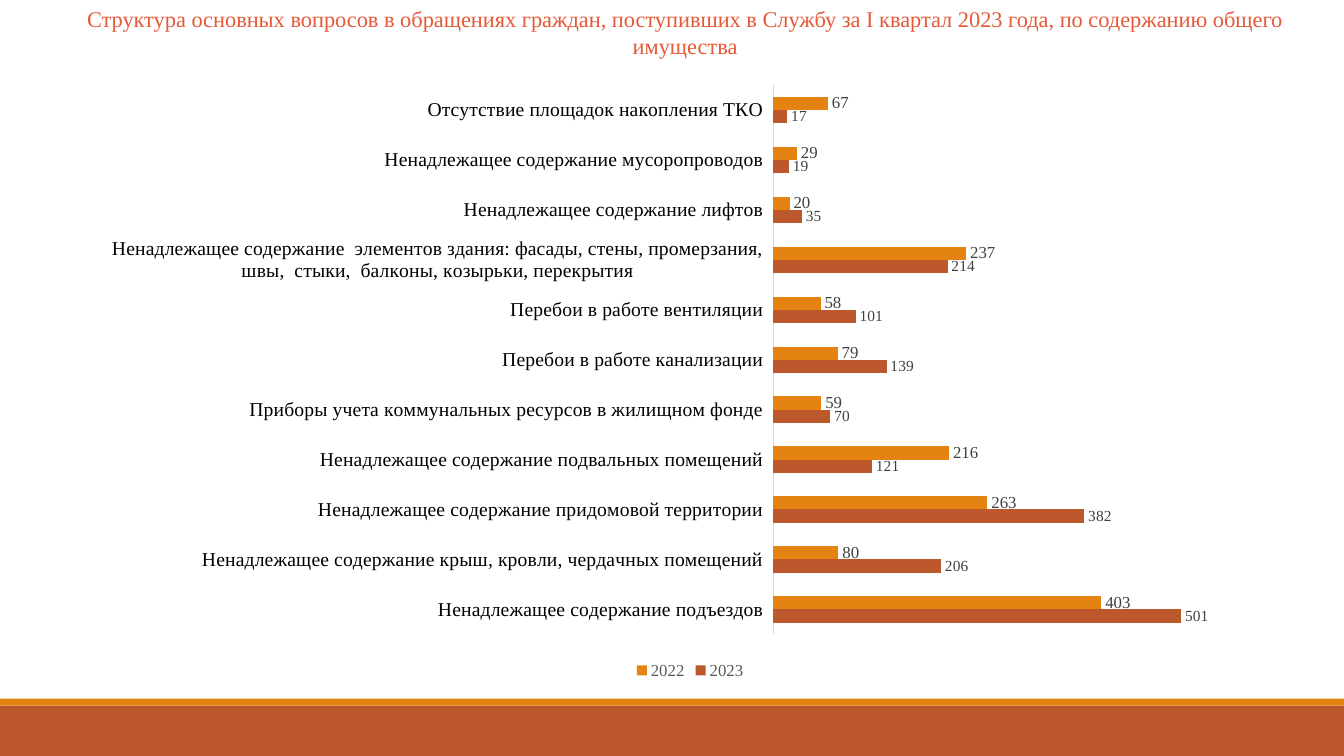
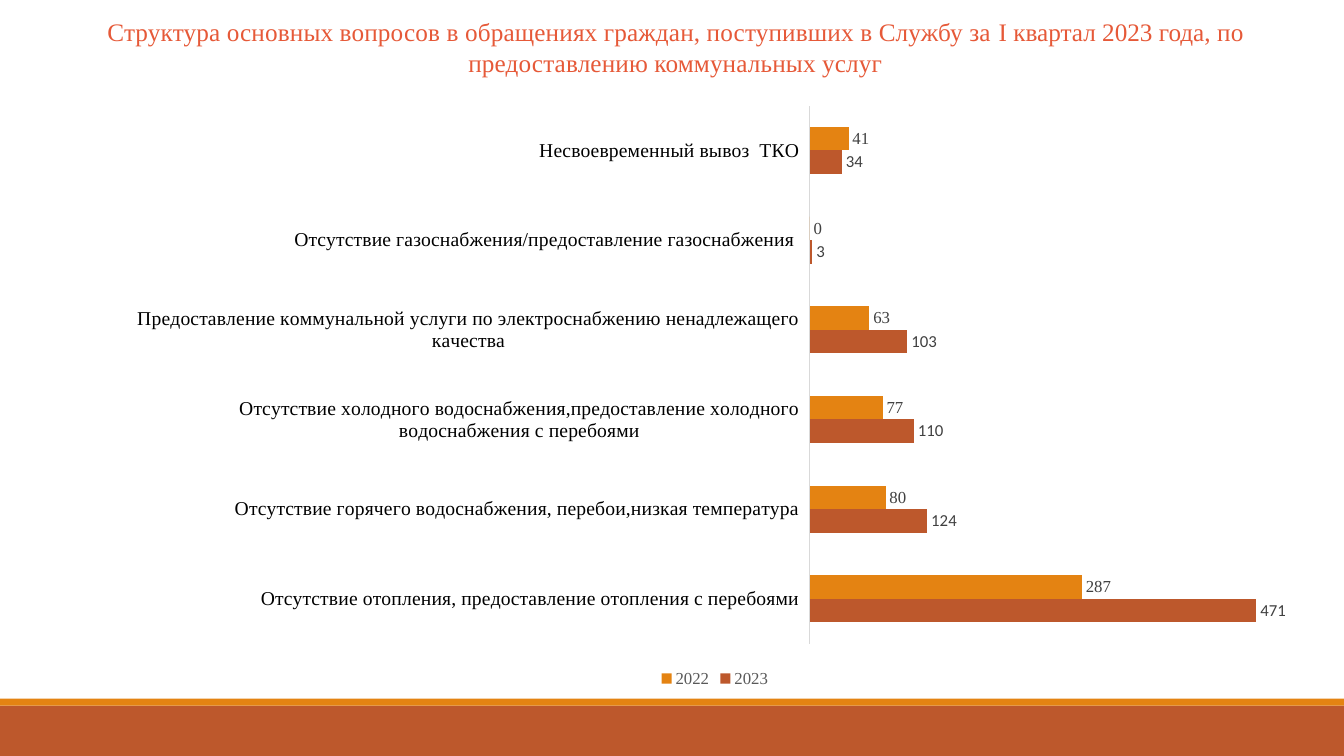
from lxml.etree import SubElement as Sub
from pptx import Presentation as Show
from pptx.chart.data import CategoryChartData as Data
from pptx.dml.color import RGBColor as Rgb
from pptx.enum.chart import XL_CHART_TYPE as Kind
from pptx.enum.chart import XL_LABEL_POSITION as Spot
from pptx.enum.chart import XL_LEGEND_POSITION as Side
from pptx.enum.chart import XL_TICK_LABEL_POSITION as Tags
from pptx.enum.chart import XL_TICK_MARK as Tick
from pptx.enum.shapes import MSO_SHAPE as Form
from pptx.enum.text import MSO_ANCHOR as Hold
from pptx.enum.text import PP_ALIGN as Align
from pptx.oxml.ns import qn
from pptx.util import Inches, Pt

SERIF, SANS = "Times New Roman", "Calibri"
RUST, AMBER, CORAL = "BD582C", "E48312", "E65938"
BLACK, DARK, GREY, PALE = "000000", "404040", "595959", "D9D9D9"


def paint(item, tone):
    if hasattr(item, "solid"):
        item.solid()
        item = item.fore_color
    item.rgb = Rgb.from_string(tone)


def style(font, size, tone, face=SERIF):
    font.size, font.name, font.bold = Pt(size), face, False
    paint(font.fill, tone)


def write(para, text, size=16, tone=CORAL, face=SERIF, space=0):
    run = para.add_run()
    run.text = text
    style(run.font, size, tone, face)
    if space:
        run.font._element.set("spc", str(space))


class Deck:
    def __init__(self):
        self.show = Show()
        self.show.slide_width = Inches(13.33)
        self.show.slide_height = Inches(7.5)
        self.slide = None

    def box(self, left, top, wide, high):
        across, down = self.show.slide_width, self.show.slide_height
        return [int(part * full / 100) for part, full in
                zip((left, top, wide, high), (across, down, across, down))]

    def page(self):
        first = self.slide is None
        self.slide = self.show.slides.add_slide(self.show.slide_layouts[5])
        if first:
            self.band(93.33, 6.67, RUST)
            self.band(92.4, 0.93, AMBER)

    def band(self, top, high, tone):
        bar = self.slide.shapes.add_shape(Form.RECTANGLE, *self.box(0, top, 100, high))
        bar.shadow.inherit = False
        paint(bar.fill, tone)
        bar.line.fill.background()
        self.show.slide_master.shapes.element.append(bar.element)

    def title(self, area, parts, size):
        head = self.slide.shapes.title
        head.left, head.top, head.width, head.height = self.box(*area)
        frame = head.text_frame
        frame.word_wrap = True
        frame.vertical_anchor = Hold.MIDDLE
        para = frame.paragraphs[0]
        para.alignment = Align.CENTER
        for text, space in parts:
            write(para, text, size=size, space=space)

    def chart(self, area, rows, plot, top, label):
        data = Data()
        data.categories = [name for name, *_ in rows]
        data.add_series("2023", [new for _, new, _ in rows])
        data.add_series("2022", [old for _, _, old in rows])
        chart = self.slide.shapes.add_chart(
            Kind.BAR_CLUSTERED, *self.box(*area), data).chart
        chart.has_title = False
        style(chart.font, 10, BLACK, SANS)
        self.axes(chart, top)
        chart.has_legend = True
        chart.legend.position = Side.BOTTOM
        chart.legend.include_in_layout = False
        style(chart.legend.font, 12, GREY)
        bars = chart.plots[0]
        bars.gap_width, bars.vary_by_categories = 182, False
        looks = (RUST, label), (AMBER, (12, DARK, SERIF))
        for row, (tone, look) in zip(bars.series, looks):
            row.invert_if_negative = False
            paint(row.format.fill, tone)
            tags = row.data_labels
            tags.show_value, tags.position = True, Spot.OUTSIDE_END
            style(tags.font, *look)
        self.place(chart, plot)

    def axes(self, chart, top):
        names, scale = chart.category_axis, chart.value_axis
        names.major_tick_mark = names.minor_tick_mark = Tick.NONE
        names.tick_label_position = Tags.LOW
        style(names.tick_labels.font, 14, BLACK)
        names.format.line.width = Pt(0.75)
        paint(names.format.line.fill, PALE)
        scale.visible = scale.has_major_gridlines = False
        scale.minimum_scale, scale.maximum_scale = 0, top

    def place(self, chart, plot):
        zone = chart._chartSpace.find(".//" + qn("c:plotArea"))
        lay = zone.find(qn("c:layout"))
        if lay is None:
            lay = Sub(zone, qn("c:layout"))
            zone.insert(0, lay)
        hand = Sub(lay, qn("c:manualLayout"))
        marks = ("layoutTarget", "inner"), ("xMode", "edge"), ("yMode", "edge")
        for key, val in (*marks, *zip("xywh", plot)):
            Sub(hand, qn("c:" + key)).set("val", str(val))


HOUSE = [
    ("Ненадлежащее содержание подъездов", 501, 403),
    ("Ненадлежащее содержание крыш, кровли, чердачных помещений", 206, 80),
    ("Ненадлежащее содержание придомовой территории", 382, 263),
    ("Ненадлежащее содержание подвальных помещений", 121, 216),
    ("Приборы учета коммунальных ресурсов в жилищном фонде", 70, 59),
    ("Перебои в работе канализации", 139, 79),
    ("Перебои в работе вентиляции", 101, 58),
    ("Ненадлежащее содержание  элементов здания: фасады, стены, промерзания, "
     "швы,  стыки,  балконы, козырьки, перекрытия", 214, 237),
    ("Ненадлежащее содержание лифтов", 35, 20),
    ("Ненадлежащее содержание мусоропроводов", 19, 29),
    ("Отсутствие площадок накопления ТКО", 17, 67),
]
SUPPLY = [
    ("Отсутствие отопления, предоставление отопления с перебоями", 471, 287),
    ("Отсутствие горячего водоснабжения, перебои,низкая температура", 124, 80),
    ("Отсутствие холодного водоснабжения,предоставление холодного "
     "водоснабжения с перебоями", 110, 77),
    ("Предоставление коммунальной услуги по электроснабжению "
     "ненадлежащего качества", 103, 63),
    ("Отсутствие газоснабжения/предоставление газоснабжения ", 3, 0),
    ("Несвоевременный вывоз  ТКО", 34, 41),
]
TOPIC = "Структура основных вопросов в обращениях граждан, поступивших в Службу за "
TERM = "I квартал 2023 года, "


def main():
    deck = Deck()
    deck.page()
    deck.title((3.83, 0, 94.3, 8.53),
               [(TOPIC + TERM + "по содержанию общего имущества", 0)], 16)
    deck.chart((7.05, 9.6, 88.6, 80.8), HOUSE, (0.57, 0.02, 0.41, 0.9),
               600, (11, DARK, SERIF))
    deck.page()
    deck.title((1.65, 1.47, 97.22, 9.47),
               [(TOPIC, 10), (TERM, 0), ("по предоставлению коммунальных услуг", 10)], 18)
    deck.chart((9.08, 12.4, 88.22, 79.07), SUPPLY, (0.58, 0.02, 0.4, 0.9),
               500, (12, DARK, SANS))
    deck.show.save("out.pptx")


if __name__ == "__main__":
    main()
